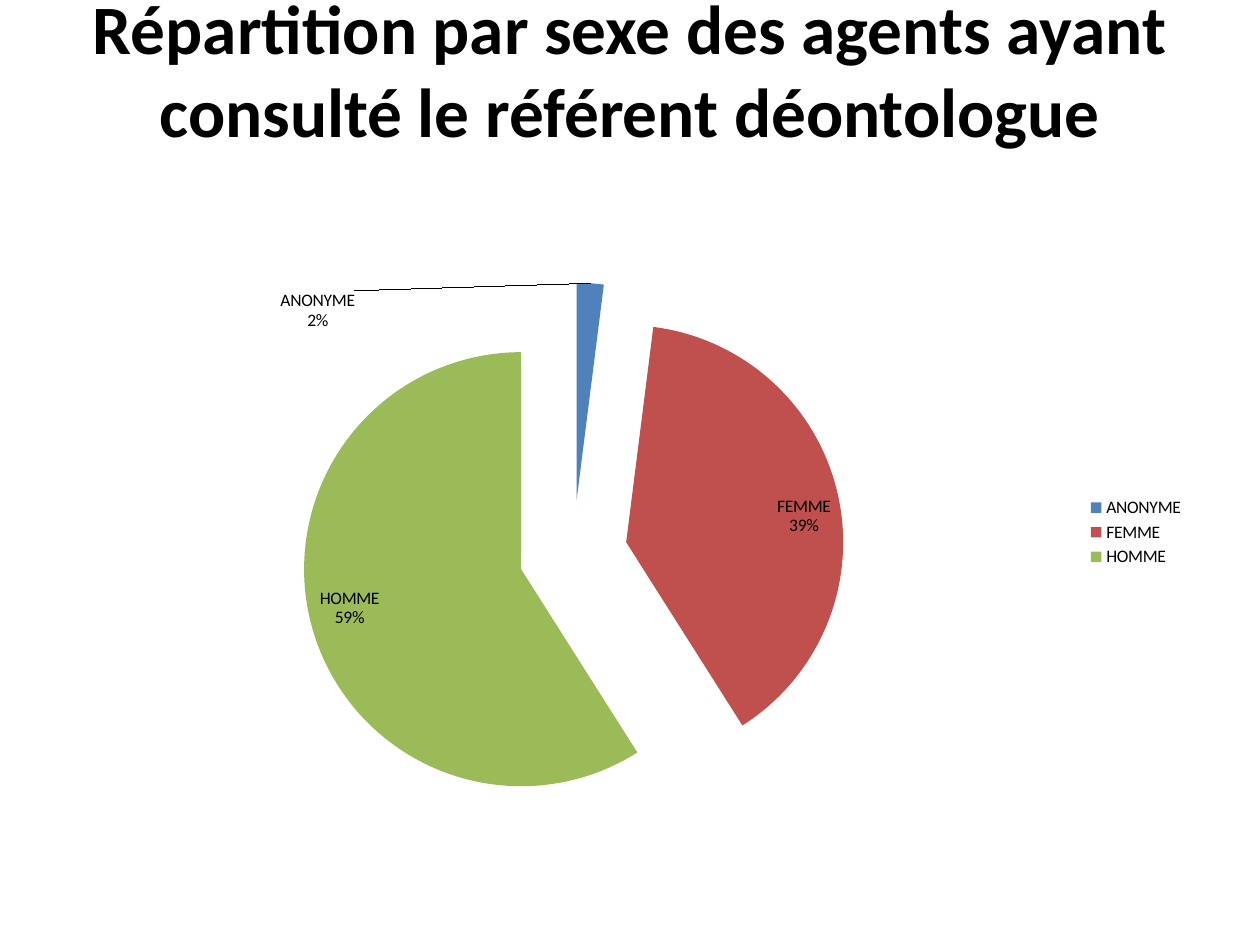
from lxml import etree
from pptx import Presentation
from pptx.chart.data import CategoryChartData
from pptx.dml.color import RGBColor
from pptx.enum.chart import XL_CHART_TYPE, XL_LABEL_POSITION, XL_LEGEND_POSITION
from pptx.enum.text import MSO_ANCHOR, PP_ALIGN
from pptx.oxml.ns import qn
from pptx.util import Inches, Pt

PIE = XL_CHART_TYPE.PIE
INSIDE = XL_LABEL_POSITION.INSIDE_END
RIGHT = XL_LEGEND_POSITION.RIGHT
MIDDLE = MSO_ANCHOR.MIDDLE
CENTER = PP_ALIGN.CENTER

BLACK = RGBColor(0x00, 0x00, 0x00)
BLUE = RGBColor(0x4F, 0x81, 0xBD)
RED = RGBColor(0xC0, 0x50, 0x4D)
GREEN = RGBColor(0x9B, 0xBB, 0x59)

FONT = "Calibri"
TITLE = "Répartition par sexe des agents ayant consulté le référent déontologue"
SHARES = [("ANONYME", 2, BLUE), ("FEMME", 39, RED), ("HOMME", 59, GREEN)]


def style(font, size, bold=False):
    font.name = FONT
    font.size = Pt(size)
    font.bold = bold
    font.color.rgb = BLACK


def make_layout(**values):
    """Return a manual chart layout; values are fractions of the chart."""
    layout = etree.Element(qn("c:layout"))
    manual = etree.SubElement(layout, qn("c:manualLayout"))
    for name, value in values.items():
        etree.SubElement(manual, qn("c:" + name)).set("val", str(value))
    return layout


def add_title(slide, left, top, width, height):
    frame = slide.shapes.add_textbox(left, top, width, height).text_frame
    frame.word_wrap = True
    frame.vertical_anchor = MIDDLE
    frame.margin_bottom = Inches(0.72)  # lifts the text within its box
    para = frame.paragraphs[0]
    para.text = TITLE
    para.alignment = CENTER
    style(para.font, 39.6, bold=True)


def show_share(labels):
    """Show category and percentage, as pie labels or as one label."""
    labels.show_category_name = True
    labels.show_percentage = True
    labels.show_value = False
    labels.position = INSIDE


def add_pie(slide, left, top, width, height):
    data = CategoryChartData()
    data.categories = [name for name, _, _ in SHARES]
    data.add_series("Series 1", [value for _, value, _ in SHARES])
    chart = slide.shapes.add_chart(PIE, left, top, width, height, data).chart
    chart.has_title = False
    style(chart.font, 10)

    # Legend
    chart.has_legend = True
    chart.legend.position = RIGHT
    chart.legend.include_in_layout = False

    # Slices
    plot = chart.plots[0]
    plot.vary_by_categories = True
    series = plot.series[0]
    for index, (_, _, color) in enumerate(SHARES):
        fill = series.points[index].format.fill
        fill.solid()
        fill.fore_color.rgb = color
    burst = etree.Element(qn("c:explosion"))
    burst.set("val", "25")
    series._element.find(qn("c:dPt")).addprevious(burst)

    # Labels, the first one moved to the left of its thin slice
    show_share(series.data_labels)
    series.points[0].data_label.position = INSIDE
    label = series._element.find(".//" + qn("c:dLbl"))
    for tag, shown in (("showVal", "0"), ("showCatName", "1"), ("showPercent", "1")):
        label.find(qn("c:" + tag)).set("val", shown)
    label.find(qn("c:idx")).addnext(make_layout(x=-0.24, y=0))

    # Plot area
    area = chart._chartSpace.find(".//" + qn("c:plotArea"))
    old = area.find(qn("c:layout"))
    if old is not None:
        area.remove(old)
    area.insert(0, make_layout(layoutTarget="inner", xMode="edge", yMode="edge",
                               x=0.21, y=0.1, w=0.48, h=0.87))


def main():
    deck = Presentation()
    deck.slide_width, deck.slide_height = Inches(10), Inches(7.5)
    slide = deck.slides.add_slide(deck.slide_layouts[6])
    add_title(slide, Inches(0.5), Inches(0.13), Inches(9), Inches(1.5))
    add_pie(slide, Inches(0.5), Inches(1.75), Inches(9), Inches(4.95))
    deck.save("out.pptx")


if __name__ == "__main__":
    main()
